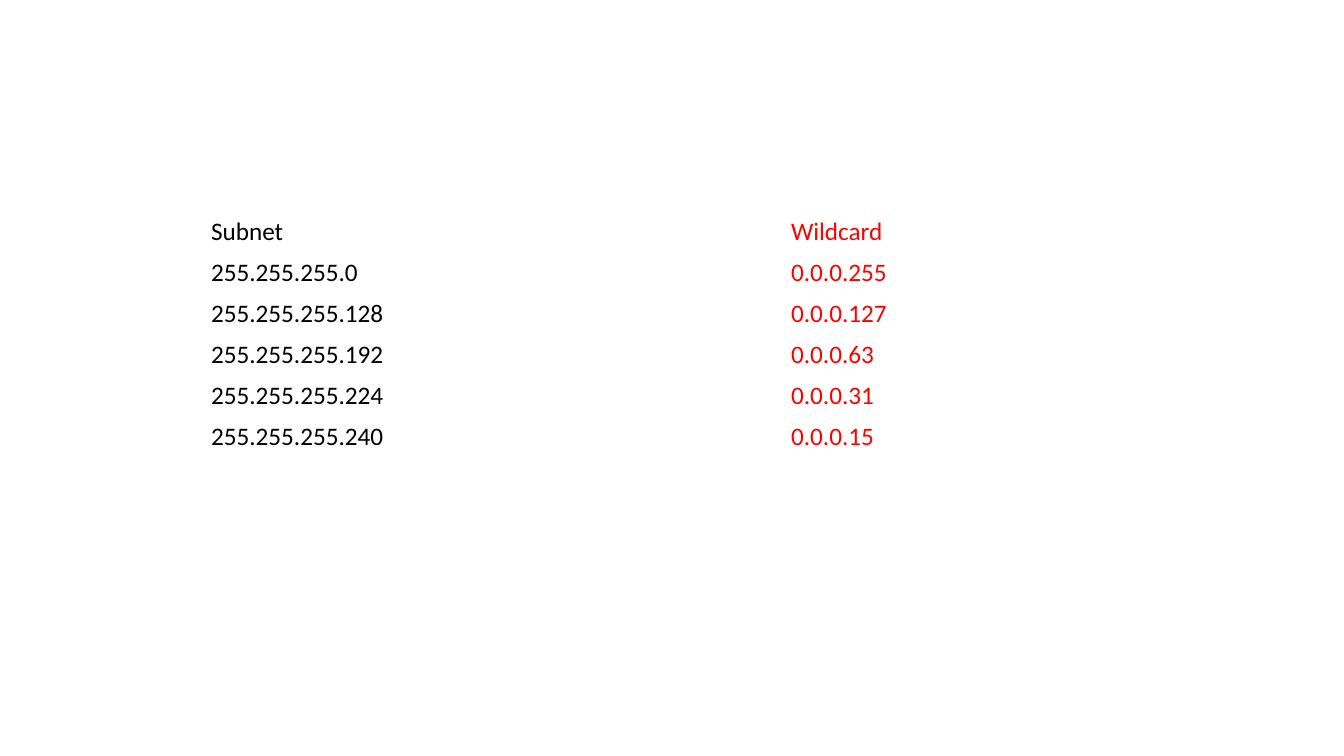
from pptx import Presentation
from pptx.dml.color import RGBColor
from pptx.enum.text import MSO_ANCHOR as Anchor
from pptx.util import Emu, Pt

EMU_PER_PX = 914400 / 100.8
BLACK, RED = "000000", "FF0000"

ROWS = [
    ("Subnet", "Wildcard"),
    ("255.255.255.0", "0.0.0.255"),
    ("255.255.255.128", "0.0.0.127"),
    ("255.255.255.192", "0.0.0.63"),
    ("255.255.255.224", "0.0.0.31"),
    ("255.255.255.240", "0.0.0.15"),
]


def px(n):
    return Emu(round(n * EMU_PER_PX))


def rgb(color):
    return RGBColor.from_string(color)


def write(tf, text, size=18, font="Calibri", color=BLACK, bold=False):
    r = tf.paragraphs[0].add_run()
    r.text = text
    r.font.size = Pt(size)
    r.font.name = font
    r.font.bold = bold
    r.font.color.rgb = rgb(color)


def add_plain_table(s, rows, colors, left, top, col_width, row_height):
    """Table without fills or banding, one text colour per column."""
    frame = s.shapes.add_table(len(rows), len(colors), px(left), px(top),
                               px(col_width * len(colors)),
                               px(row_height * len(rows)))
    table = frame.table
    table.first_row = False
    table.horz_banding = False
    for column in table.columns:
        column.width = px(col_width)
    for row, texts in zip(table.rows, rows):
        row.height = px(row_height)
        for cell, text, color in zip(row.cells, texts, colors):
            cell.fill.background()
            cell.vertical_anchor = Anchor.MIDDLE
            write(cell.text_frame, text, color=color)


def main():
    prs = Presentation()
    prs.slide_width, prs.slide_height = px(1344), px(756)
    s = prs.slides.add_slide(prs.slide_layouts[6])

    # Subnet masks with their wildcard masks
    add_plain_table(s, ROWS, (BLACK, RED), left=201, top=211,
                    col_width=580, row_height=41)

    prs.save("out.pptx")


if __name__ == "__main__":
    main()
